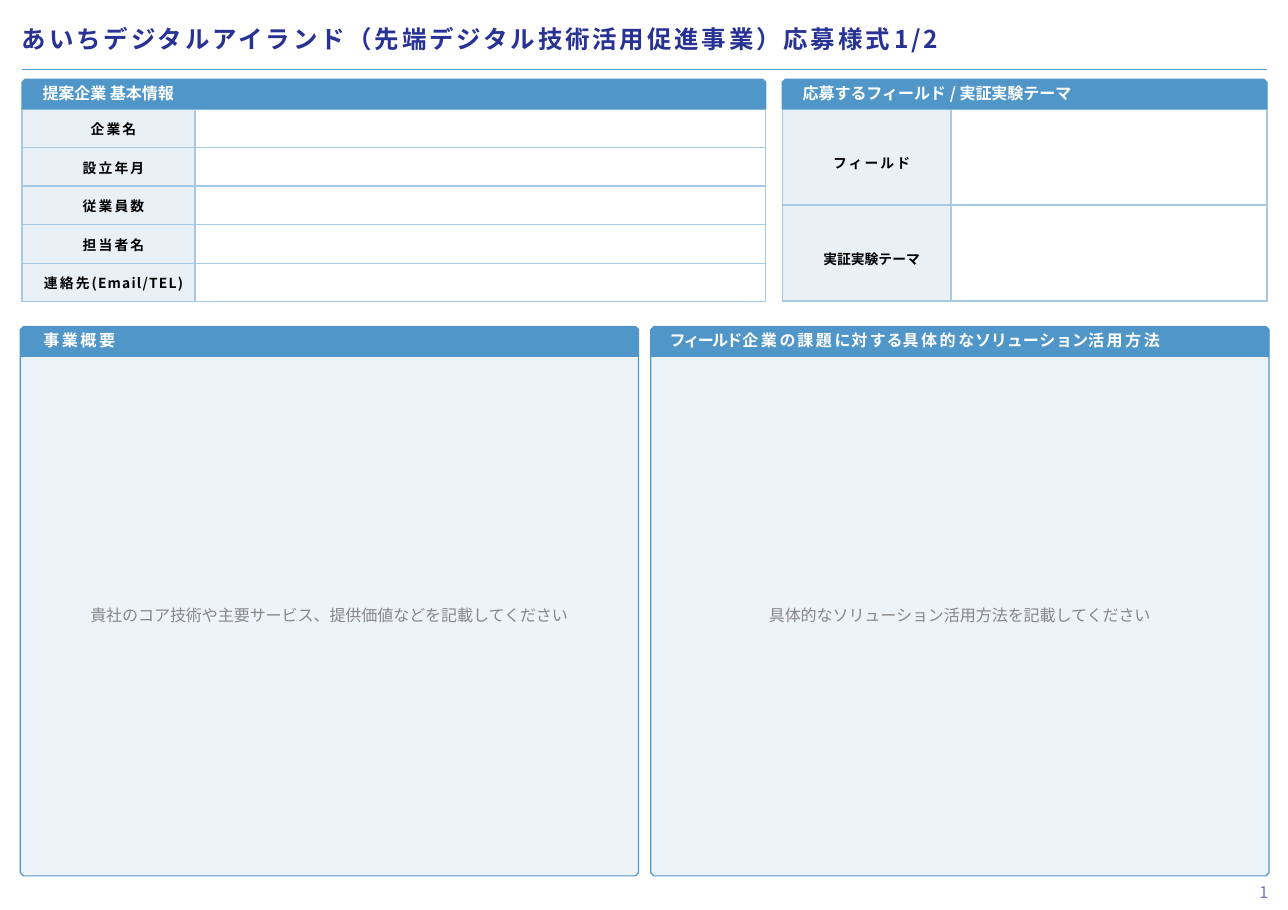
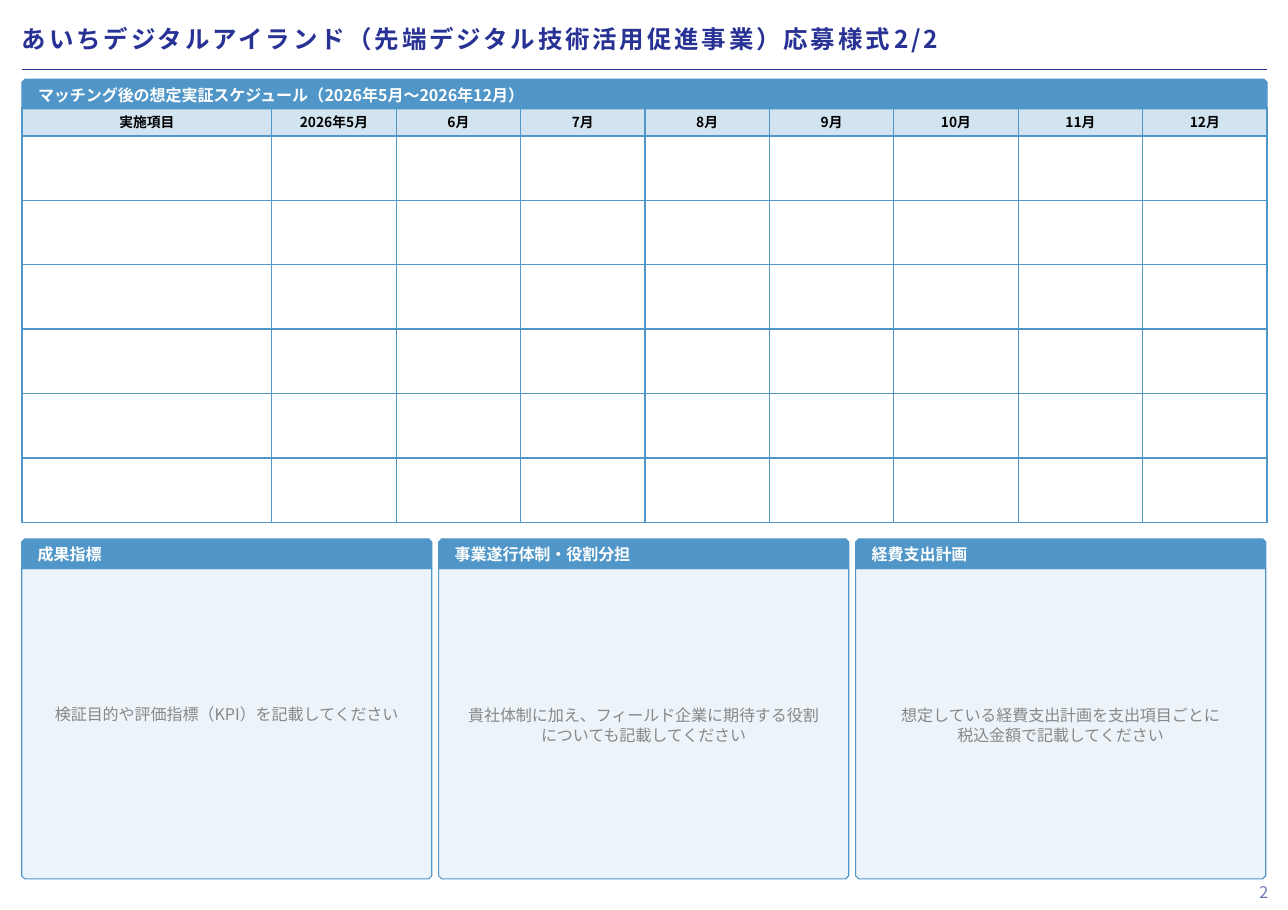
from lxml.etree import SubElement
from pptx import Presentation
from pptx.dml.color import RGBColor
from pptx.enum.shapes import MSO_CONNECTOR, MSO_SHAPE
from pptx.enum.text import MSO_ANCHOR, PP_ALIGN
from pptx.oxml.ns import qn
from pptx.util import Pt

FONT = "Noto Sans CJK JP"
COLORS = {
    "title": "283295", "blue": "5096C8", "panel": "EDF4F9", "white": "FFFFFF",
    "black": "000000", "hint": "878787", "page": "6978B4",
    "border": "A7C9E3", "label": "94BDD9",
}
LEFT, WIDTH = 14.4, 813.6
BAND_TOP, BAND_H = 51.8, 19.4
CUT = 2          # snipped corner
LEADING = 1.15   # line height in ems

# Content: a text is a list of (words, letter spacing) runs
TITLE = "あいちデジタルアイランド（先端デジタル技術活用促進事業）応募様式"
COMPANY = {
    "heading": [("提案企業 基本情報", 0)],
    "labels": [
        [("企業名", 1.4)], [("設立年月", 1.4)], [("従業員数", 1.4)],
        [("担当者名", 1.4)], [("連絡先", 1.4), ("(Email/TEL)", 0.8)],
    ],
    "left": LEFT, "cols": [113, 373], "row_h": 25.2, "inset_top": 3.3,
}
FIELD = {
    "heading": [("応募するフィールド / 実証実験テーマ", 0)],
    "labels": [[("フィールド", 1.4)], [("実証実験テーマ", 0)]],
    "left": 511.2, "cols": [110.2, 206.6], "row_h": 62.8, "inset_top": 9.5,
}
PROPOSAL_PANELS = [
    ([("事業概", 1.7), ("要", 0.7)],
     ["貴社のコア技術や主要サービス、提供価値などを記載してください"]),
    ([("フィールド", -1.1), ("企業", 1.7), ("の", 1.2), ("課題", 1.7), ("に", 0.5),
      ("対", 1.7), ("す", 0.5), ("る", -0.3), ("具体的", 1.7), ("な", 0.5),
      ("ソ", -1.1), ("リ", -1.8), ("ュ", -1.1), ("ーシ", 0.5), ("ョ", -2.5),
      ("ン", -0.3), ("活用方", 1.7), ("法", 1.2)],
     ["具体的なソリューション活用方法を記載してください"]),
]
SCHEDULE_HEADING = [("マッチング後の想定実証スケジュール（2026年5月～2026年12月）", 0)]
SCHEDULE_COLS = ["実施項目", "2026年5月"] + [f"{m}月" for m in range(6, 13)]
SCHEDULE_ROWS = 6
PLAN_PANELS = [
    ([("成果指標", 0)], ["検証目的や評価指標（KPI）を記載してください"]),
    ([("事業遂行体制・役割分担", 0)],
     ["貴社体制に加え、フィールド企業に期待する役割", "についても記載してください"]),
    ([("経費支出計画", 0)],
     ["想定している経費支出計画を支出項目ごとに", "税込金額で記載してください"]),
]


def rgb(name):
    return RGBColor.from_string(COLORS[name])


# Text
def write(p, runs, size, color, bold=False, align=PP_ALIGN.LEFT, leading=None):
    p.alignment = align
    p.line_spacing = Pt(leading or round(size * LEADING, 1))
    for words, spacing in runs:
        r = p.add_run()
        r.text = words
        r.font.size, r.font.bold = Pt(size), bold
        r.font.color.rgb = rgb(color)
        r.font.name = FONT
        rpr = r._r.get_or_add_rPr()
        rpr.set("lang", "ja-JP")
        rpr.set("spc", str(round(spacing * 100)))
        SubElement(rpr, qn("a:ea")).set("typeface", FONT)


def set_insets(box, left=0, top=0, right=0, bottom=0):
    box.margin_left, box.margin_top = Pt(left), Pt(top)
    box.margin_right, box.margin_bottom = Pt(right), Pt(bottom)


def add_text(slide, left, top, width, height, lines, size, color, wrap=True, **style):
    tf = slide.shapes.add_textbox(Pt(left), Pt(top), Pt(width), Pt(height)).text_frame
    tf.word_wrap = wrap
    set_insets(tf)
    for i, line in enumerate(lines):
        p = tf.add_paragraph() if i else tf.paragraphs[0]
        if i:
            p.space_before = Pt(1)
        write(p, [line], size, color, **style)


# Bands and panels
def add_snipped(slide, left, top, width, height, fill, at_top):
    sp = slide.shapes.add_shape(MSO_SHAPE.SNIP_2_SAME_RECTANGLE,
                                Pt(left), Pt(top), Pt(width), Pt(height))
    cut = CUT / min(width, height)
    sp.adjustments[0], sp.adjustments[1] = (cut, 0) if at_top else (0, cut)
    sp.shadow.inherit = False
    sp.fill.solid()
    sp.fill.fore_color.rgb = rgb(fill)
    sp.line.color.rgb = rgb("blue")
    sp.line.width = Pt(0.75)
    return sp


def add_band(slide, left, top, width, runs, inset, lift):
    tf = add_snipped(slide, left, top, width, BAND_H, "blue", True).text_frame
    tf.word_wrap = True
    tf.vertical_anchor = MSO_ANCHOR.MIDDLE
    # One full-width character of indent, including its letter spacing
    indent = inset + 10.5 + runs[0][1] - CUT / 2
    set_insets(tf, left=indent, top=max(0, -lift), bottom=max(0, lift))
    write(tf.paragraphs[0], runs, 10.5, "white", bold=True)


def add_panels(slide, panels, left, top, width, step, bottom, hint_top, inset, lift):
    for i, (heading, hint) in enumerate(panels):
        x, body_top = left + i * step, top + BAND_H
        add_snipped(slide, x, body_top, width, bottom - body_top, "panel", False)
        add_band(slide, x, top, width, heading, inset, lift)
        add_text(slide, x, hint_top, width, 13.5 * len(hint),
                 [(line, 0) for line in hint], 10.5, "hint", align=PP_ALIGN.CENTER)


# Tables
def style_cell(cell, border, fill=None, alpha=100):
    set_insets(cell)
    cell.vertical_anchor = MSO_ANCHOR.MIDDLE
    tcpr = cell._tc.get_or_add_tcPr()
    for side in ("lnL", "lnR", "lnT", "lnB"):
        ln = SubElement(tcpr, qn(f"a:{side}"), w=str(Pt(1)))
        SubElement(SubElement(ln, qn("a:solidFill")), qn("a:srgbClr"), val=COLORS[border])
    if fill:
        cell.fill.solid()
        cell.fill.fore_color.rgb = rgb(fill)
        color = tcpr.find(qn("a:solidFill"))[0]
        SubElement(color, qn("a:alpha"), val=str(alpha * 1000))
    else:
        cell.fill.background()
        SubElement(cell.text_frame.paragraphs[0]._p, qn("a:endParaRPr"), sz="900")


def add_grid(slide, left, top, cols, rows):
    table = slide.shapes.add_table(len(rows), len(cols), Pt(left), Pt(top),
                                   Pt(sum(cols)), Pt(sum(rows))).table
    table.first_row = table.horz_banding = False
    for col, width in zip(table.columns, cols):
        col.width = Pt(width)
    for row, height in zip(table.rows, rows):
        row.height = Pt(height)
    return table


def write_label(cell, runs):
    write(cell.text_frame.paragraphs[0], runs, 9, "black", bold=True,
          align=PP_ALIGN.CENTER)


def add_form(slide, form):
    table = add_grid(slide, form["left"], BAND_TOP + BAND_H, form["cols"],
                     [form["row_h"]] * len(form["labels"]))
    for row, runs in zip(table.rows, form["labels"]):
        label, entry = row.cells
        style_cell(label, "border", "label", 20)
        set_insets(label, left=6.5, top=form["inset_top"])
        write_label(label, runs)
        style_cell(entry, "border")
    add_band(slide, form["left"], BAND_TOP, sum(form["cols"]), form["heading"], 2.9, 2)


def add_schedule(slide):
    month_w = 81.3
    cols = [WIDTH - 8 * month_w] + [month_w] * 8
    table = add_grid(slide, LEFT, BAND_TOP + BAND_H - 0.8, cols,
                     [18.4] + [42.1] * SCHEDULE_ROWS)
    for i, row in enumerate(table.rows):
        for cell, name in zip(row.cells, SCHEDULE_COLS):
            if i:
                style_cell(cell, "blue")
            else:
                style_cell(cell, "blue", "blue", 25)
                set_insets(cell, top=2.4)
                write_label(cell, [(name, 0)])
    add_band(slide, LEFT, BAND_TOP, WIDTH, SCHEDULE_HEADING, 0, -1)


# Shared frame: title, rule and page number
def add_page(prs, number, total, rule_color):
    slide = prs.slides.add_slide(prs.slide_layouts[6])
    add_text(slide, LEFT, 16.5, WIDTH, 20, [(f"{TITLE}{number}/{total}", 1.9)],
             16, "title", bold=True)
    rule = slide.shapes.add_connector(MSO_CONNECTOR.STRAIGHT, Pt(LEFT), Pt(45.4),
                                      Pt(LEFT + WIDTH), Pt(45.4))
    rule.line.color.rgb = rgb(rule_color)
    rule.line.width = Pt(0.75)
    SubElement(rule._element.spPr, qn("a:effectLst"))
    add_text(slide, 823, 579.6, 10, 10, [(str(number), 0)], 10.5, "page",
             wrap=False, leading=9.4)
    return slide


def main():
    prs = Presentation()
    prs.slide_width, prs.slide_height = Pt(841.7), Pt(594.7)

    # Company, field and proposal
    slide = add_page(prs, 1, 2, "blue")
    add_form(slide, COMPANY)
    add_form(slide, FIELD)
    add_panels(slide, PROPOSAL_PANELS, left=13.3, top=213.4, width=404, step=412,
               bottom=572.4, hint_top=396.1, inset=2.9, lift=2)

    # Schedule and plans
    slide = add_page(prs, 2, 2, "title")
    add_schedule(slide)
    add_panels(slide, PLAN_PANELS, left=14.2, top=352.2, width=268, step=272.5,
               bottom=574.4, hint_top=461.2, inset=0, lift=0)

    prs.save("out.pptx")


if __name__ == "__main__":
    main()
